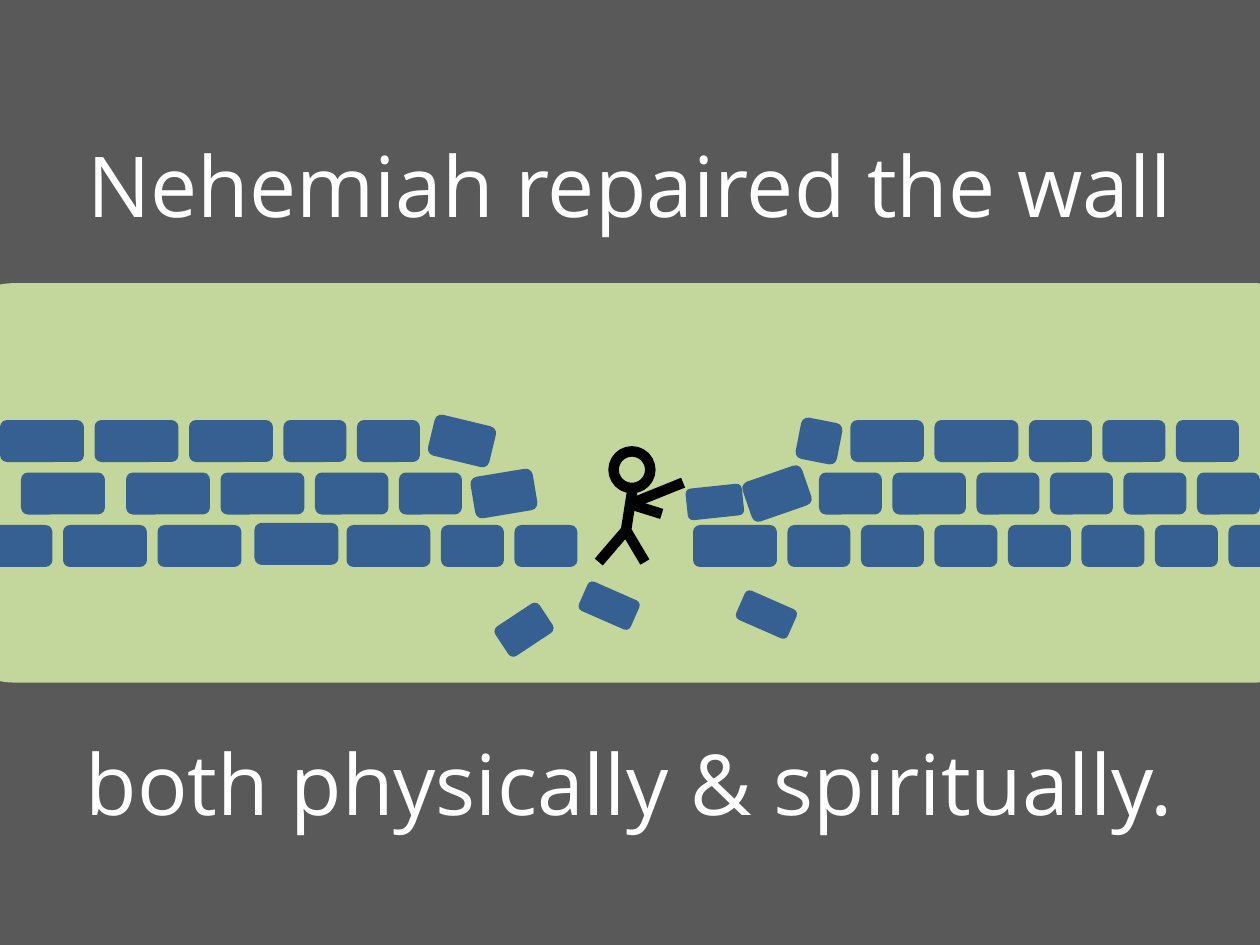
from dataclasses import dataclass

from lxml.etree import SubElement
from pptx import Presentation
from pptx.dml.color import RGBColor
from pptx.enum.shapes import MSO_CONNECTOR as Connector, MSO_SHAPE as Preset
from pptx.enum.text import MSO_AUTO_SIZE as AutoSize, PP_ALIGN as Align
from pptx.oxml.ns import qn
from pptx.util import Cm, Pt

SLIDE_WIDTH, SLIDE_HEIGHT = 25.4, 19.05
UNIT = 2.54 / 12  # wall grid step in cm, also the gap between bricks
BRICK_HEIGHT = 4 * UNIT
GRAY, GREEN, BLUE, BLACK, WHITE = "595959", "C3D69B", "376092", "000000", "FFFFFF"
STROKE = Pt(6)
CAPTION_FONT = {"name": "Open Sans", "size": Pt(48)}
CAPTION_FRAME = {"word_wrap": True, "auto_size": AutoSize.SHAPE_TO_FIT_TEXT}


@dataclass
class Course:
    """A run of bricks: start, top and widths in grid units, tilts by brick index."""
    start: int
    top: int
    widths: list[int]
    tilts: dict[int, float]


@dataclass
class LooseBrick:
    left: float
    top: float
    width: float
    height: float
    tilt: float = 0


@dataclass
class Limb:
    start: tuple[float, float]
    end: tuple[float, float]


@dataclass
class Caption:
    text: str
    top: float


COURSES = [
    Course(0, 40, [8, 8, 8, 6, 6, 6], {5: 13.6}),
    Course(76, 40, [4, 7, 8, 6, 6, 6], {0: 11.2}),
    Course(2, 45, [8], {}),
    Course(12, 45, [8, 8, 7, 6, 6], {4: 350.6}),
    Course(71, 45, [6, 6, 7, 6, 6, 6, 6], {0: 340.9}),
    Course(-3, 50, [8, 8, 8], {}),
    Course(33, 50, [8, 6, 6], {}),
    Course(66, 50, [8] + [6] * 7, {}),
]
LOOSE_BRICKS = [
    LooseBrick(5.13, 10.54, 8 * UNIT, BRICK_HEIGHT),
    LooseBrick(11.71, 11.89, 1.14, 0.64, 23.7),
    LooseBrick(10.03, 12.34, 1.07, 0.71, 326.5),
    LooseBrick(13.84, 9.8, 1.14, 0.64, 354),
    LooseBrick(14.88, 12.07, 1.14, 0.64, 23.7),
]
HIP, SHOULDER = (12.62, 10.69), (12.7, 10.16)
LIMBS = [
    Limb((12.07, 11.33), HIP),
    Limb(HIP, (13, 11.33)),
    Limb(HIP, (12.75, 9.86)),
    Limb(SHOULDER, (13.34, 10.36)),
    Limb(SHOULDER, (13.77, 9.73)),
]
CAPTIONS = [
    Caption("Nehemiah repaired the wall", 2.57),
    Caption("both physically & spiritually.", 14.63),
]


def set_color(color_format, color: str) -> None:
    color_format.rgb = RGBColor.from_string(color)


def set_values(target, values: dict) -> None:
    for name, value in values.items():
        setattr(target, name, value)


def add_filled(shapes, preset, left: float, top: float, width: float,
               height: float, color: str, tilt: float = 0) -> None:
    shape = shapes.add_shape(preset, Cm(left), Cm(top), Cm(width), Cm(height))
    shape.shadow.inherit = False
    shape.fill.solid()
    set_color(shape.fill.fore_color, color)
    shape.line.fill.background()
    shape.rotation = tilt


def add_course(shapes, course: Course) -> None:
    left = course.start
    for index, width in enumerate(course.widths):
        add_filled(shapes, Preset.ROUNDED_RECTANGLE, left * UNIT, course.top * UNIT,
                   width * UNIT, BRICK_HEIGHT, BLUE, course.tilts.get(index, 0))
        left += width + 1


def add_wall(slide) -> None:
    shapes = slide.shapes.add_group_shape().shapes
    for course in COURSES:
        add_course(shapes, course)
    for brick in LOOSE_BRICKS:
        add_filled(shapes, Preset.ROUNDED_RECTANGLE, brick.left, brick.top,
                   brick.width, brick.height, BLUE, brick.tilt)


def add_caption(slide, caption: Caption) -> None:
    box = slide.shapes.add_textbox(0, Cm(caption.top), Cm(SLIDE_WIDTH), Cm(2.31))
    set_values(box.text_frame, CAPTION_FRAME)
    paragraph = box.text_frame.paragraphs[0]
    paragraph.alignment = Align.CENTER
    run = paragraph.add_run()
    run.text = caption.text
    set_values(run.font, CAPTION_FONT)
    set_color(run.font.color, WHITE)


def set_stroke(line) -> None:
    line.width = STROKE
    set_color(line.color, BLACK)


def add_limb(shapes, limb: Limb) -> None:
    points = [Cm(value) for value in (*limb.start, *limb.end)]
    connector = shapes.add_connector(Connector.STRAIGHT, *points)
    set_stroke(connector.line)
    SubElement(connector._element.spPr, qn("a:effectLst"))


def add_builder(slide) -> None:
    """Draw the stick figure that stands in the gap of the wall."""
    shapes = slide.shapes.add_group_shape().shapes
    for limb in LIMBS:
        add_limb(shapes, limb)
    head = shapes.add_shape(Preset.OVAL, Cm(12.37), Cm(9.1), Cm(0.74), Cm(0.74))
    head.shadow.inherit = False
    head.fill.background()
    set_stroke(head.line)


def main() -> None:
    presentation = Presentation()
    presentation.slide_width = Cm(SLIDE_WIDTH)
    presentation.slide_height = Cm(SLIDE_HEIGHT)
    slide = presentation.slides.add_slide(presentation.slide_layouts[6])
    add_filled(slide.shapes, Preset.RECTANGLE, 0, 0, SLIDE_WIDTH, SLIDE_HEIGHT, GRAY)
    add_filled(slide.shapes, Preset.ROUNDED_RECTANGLE, -1.07, 5.71, 27.74, 8.05, GREEN)
    add_wall(slide)
    for caption in CAPTIONS:
        add_caption(slide, caption)
    add_builder(slide)
    presentation.save("out.pptx")


if __name__ == "__main__":
    main()
